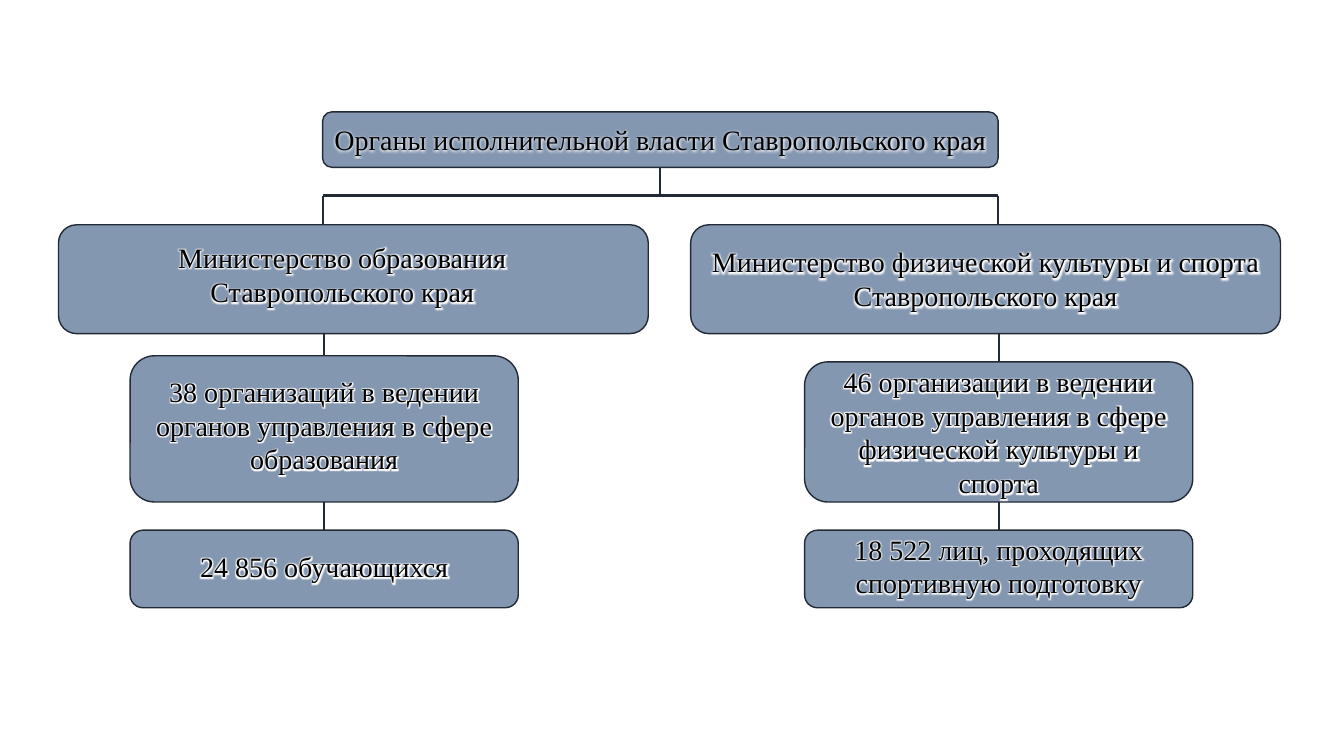
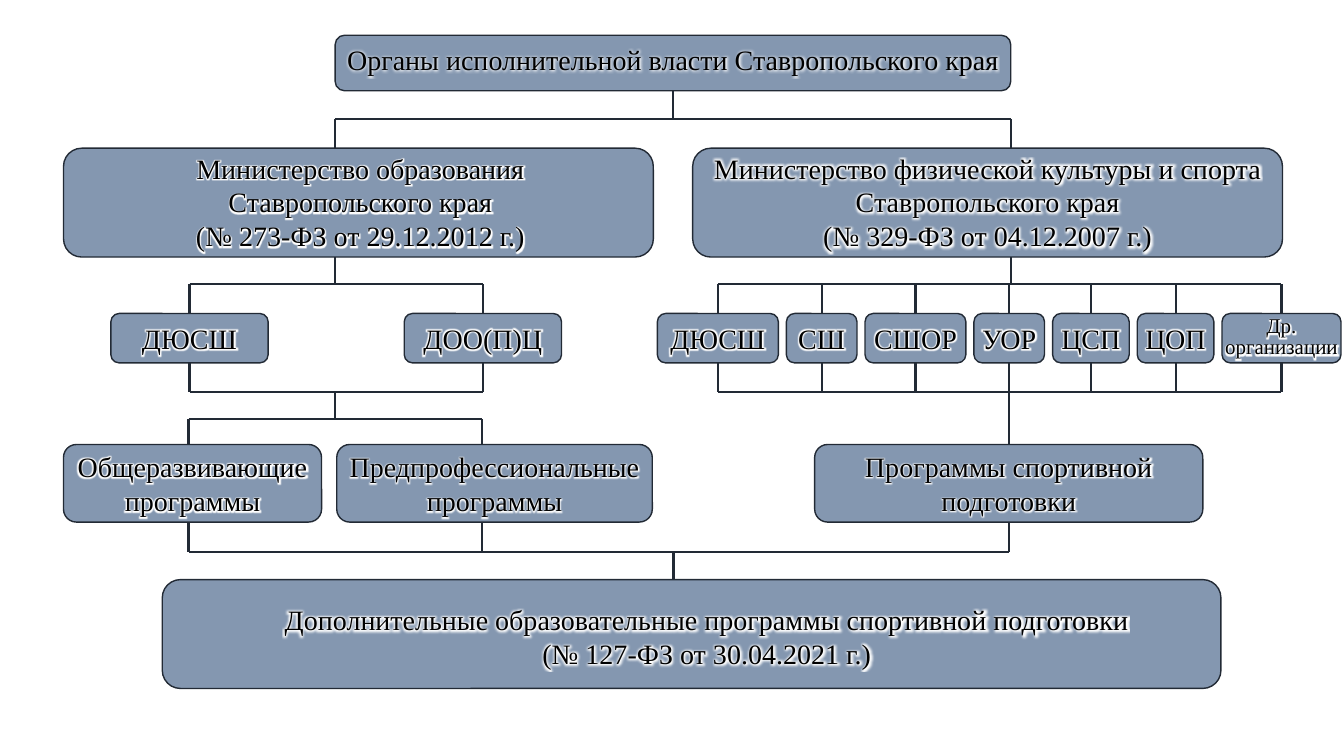
import dataclasses

import pptx
import pptx.dml.color
import pptx.enum.shapes
import pptx.enum.text
import pptx.oxml
import pptx.oxml.ns
import pptx.util
from pptx.util import Inches


@dataclasses.dataclass(frozen=True)
class Theme:
    font: str = "Times New Roman"
    fill: str = "8497B0"
    line: str = "222A35"
    text: str = "000000"
    glow: str = "FFFFFF"
    size: int = 20
    small: int = 15
    border: float = 1
    link: float = 1.5
    pad: float = 0.06


THEME = Theme()
TITLE = "Органы исполнительной власти Ставропольского края"
EDUCATION = "Министерство образования\nСтавропольского края"
SPORT = "Министерство физической культуры и спорта Ставропольского края"
A_NS = pptx.oxml.ns.nsdecls("a")


def rgb(value):
    return pptx.dml.color.RGBColor.from_string(value)


def add_glow(r):
    """Put a soft white halo behind the letters of a run."""
    effect = pptx.oxml.parse_xml(
        f'<a:effectLst {A_NS}><a:glow rad="63500"><a:srgbClr val="{THEME.glow}"/>'
        "</a:glow></a:effectLst>")
    r.font.fill._xPr.find(pptx.oxml.ns.qn("a:solidFill")).addnext(effect)


def box(s, x, y, w, h, text, shift=(0, 0), wrap=True, size=THEME.size):
    """Rounded box with centred text, which shift moves off the centre."""
    sp = s.shapes.add_shape(pptx.enum.shapes.MSO_SHAPE.ROUNDED_RECTANGLE,
                            Inches(x), Inches(y), Inches(w), Inches(h))
    sp.shadow.inherit = False
    sp.fill.solid()
    sp.fill.fore_color.rgb = rgb(THEME.fill)
    sp.line.color.rgb = rgb(THEME.line)
    sp.line.width = pptx.util.Pt(THEME.border)
    tf = sp.text_frame
    tf.word_wrap = wrap
    tf.vertical_anchor = pptx.enum.text.MSO_ANCHOR.MIDDLE
    dx, dy = shift
    tf.margin_left = Inches(THEME.pad + max(0, 2 * dx))
    tf.margin_right = Inches(THEME.pad + max(0, -2 * dx))
    tf.margin_top = Inches(max(0, 2 * dy))
    tf.margin_bottom = Inches(max(0, -2 * dy))
    tf.text = text
    for p in tf.paragraphs:
        p.alignment = pptx.enum.text.PP_ALIGN.CENTER
        if size == THEME.small:
            p.line_spacing = pptx.util.Pt(size)
        for r in p.runs:
            r.font.size = pptx.util.Pt(size)
            r.font.color.rgb = rgb(THEME.text)
            r.font.name = THEME.font
            add_glow(r)
    return sp


def line(s, x1, y1, x2, y2):
    c = s.shapes.add_connector(pptx.enum.shapes.MSO_CONNECTOR.STRAIGHT,
                               Inches(x1), Inches(y1), Inches(x2), Inches(y2))
    c.line.color.rgb = rgb(THEME.line)
    c.line.width = pptx.util.Pt(THEME.link)
    c._element.spPr.append(pptx.oxml.parse_xml(f"<a:effectLst {A_NS}/>"))
    return c


def middle(sp):
    return (sp.left + sp.width / 2) / Inches(1)


def top(sp):
    return sp.top / Inches(1)


def bottom(sp):
    return (sp.top + sp.height) / Inches(1)


def snap(x, sp):
    """Return x, or the middle of the box when x lies next to it."""
    return middle(sp) if abs(middle(sp) - x) < 0.03 else x


def stem(s, x, upper, lower):
    """Vertical line between two ends, each a box or a height."""
    ends = [upper, lower]
    boxes = [e for e in ends if not isinstance(e, (int, float))]
    for sp in boxes:
        x = snap(x, sp)
    y1 = bottom(upper) if upper in boxes else upper
    y2 = top(lower) if lower in boxes else lower
    c = line(s, x, y1, x, y2)
    if upper in boxes and x == middle(upper):
        c.begin_connect(upper, 2)
    if lower in boxes and x == middle(lower):
        c.end_connect(lower, 0)
    return x


def comb(s, y, teeth):
    """Horizontal bar at y with a stem to each (x, box) above or below it."""
    xs = [stem(s, x, sp, y) if bottom(sp) <= y else stem(s, x, y, sp)
          for x, sp in teeth]
    line(s, min(xs), y, max(xs), y)


def centred(boxes):
    return [(middle(sp), sp) for sp in boxes]


def authorities(s, x, y, w, education, sport, title_dx=0, title_dy=0, shift=(0, 0)):
    """Head box over two ministries; returns ministries and their stem positions."""
    title_w, ministry_w, ministry_h = 6.7, 5.85, 1.08
    left = x + (w - title_w) / 2 + title_dx
    right = left + title_w
    title = box(s, left, y, title_w, 0.55, TITLE, (0, title_dy))
    row = y + 1.12
    first = box(s, x, row, ministry_w, ministry_h, education, shift)
    second = box(s, x + w - ministry_w, row, ministry_w, ministry_h, sport, (0, -0.01))
    comb(s, y + 0.83, [(middle(title), title), (left, first), (right, second)])
    return first, second, left, right


def branch(s, x, y, h, ministry, bodies, people, shift=(0, 0)):
    """Two stacked boxes under a ministry, ending at a common row."""
    w = 3.85
    upper = box(s, x, y, w, h, bodies, shift)
    lower = box(s, x, y + h + 0.28, w, 0.77, people, (0, -0.03))
    stem(s, middle(upper), ministry, upper)
    stem(s, middle(upper), upper, lower)


def row_of_schools(s, x, y, gap, schools):
    """Row of small boxes, given as (text, width)."""
    boxes = []
    for text, w in schools:
        size = THEME.small if "\n" in text else THEME.size
        boxes.append(box(s, x, y, w, 0.49, text, wrap=False, size=size))
        x += w + gap
    return boxes


def management_slide(prs):
    s = prs.slides.add_slide(prs.slide_layouts[6])
    first, second, _, _ = authorities(s, 0.58, 1.11, 12.12, EDUCATION, SPORT,
                                      title_dx=-0.09, shift=(-0.11, -0.05))
    branch(s, 1.29, 3.53, 1.45, first,
           "38 организаций в ведении органов управления в сфере образования",
           "24 856 обучающихся", (0, -0.04))
    branch(s, 7.98, 3.59, 1.39, second,
           "46 организации в ведении органов управления в сфере физической культуры и спорта",
           "18 522 лиц, проходящих спортивную подготовку")


def programmes_slide(prs):
    s = prs.slides.add_slide(prs.slide_layouts[6])
    first, second, left, right = authorities(
        s, 0.63, 0.35, 12.09,
        EDUCATION + "\n(№ 273-ФЗ от 29.12.2012 г.)",
        SPORT + "\n(№ 329-ФЗ от 04.12.2007 г.)",
        title_dy=-0.04, shift=(0.02, -0.01))

    # Schools under each ministry
    school_y = 3.11
    edu_schools = row_of_schools(s, 1.1, school_y, 1.35,
                                 [("ДЮСШ", 1.56), ("ДОО(П)Ц", 1.56)])
    sport_schools = row_of_schools(
        s, 6.52, school_y, 0.08,
        [("ДЮСШ", 1.2), ("СШ", 0.7), ("СШОР", 1), ("УОР", 0.7),
         ("ЦСП", 0.76), ("ЦОП", 0.76), ("Др.\nорганизации", 1.18)])
    comb(s, 2.82, [(left, first)] + centred(edu_schools))
    comb(s, 2.82, [(right, second)] + centred(sport_schools))

    # Programmes
    prog_y, prog_h = 4.41, 0.77
    general = box(s, 0.63, prog_y, 2.56, prog_h, "Общеразвивающие программы")
    pre_pro = box(s, 3.34, prog_y, 3.13, prog_h, "Предпрофессиональные программы")
    training = box(s, 8.08, prog_y, 3.85, prog_h, "Программы спортивной подготовки")
    edu_programmes = [(1.87, general), (4.78, pre_pro)]
    comb(s, 3.89, centred(edu_schools))
    stem(s, left, 3.89, 4.16)
    comb(s, 4.16, edu_programmes)
    comb(s, 3.89, centred(sport_schools) + [(right, training)])

    # Resulting programmes
    result = box(s, 1.61, 5.75, 10.5, 1.08,
                 "Дополнительные образовательные программы спортивной подготовки\n"
                 "(№ 127-ФЗ от 30.04.2021 г.)", (0.15, 0.02))
    comb(s, 5.48, edu_programmes + [(right, training), (6.68, result)])


def main():
    prs = pptx.Presentation()
    prs.slide_width, prs.slide_height = Inches(13.33), Inches(7.5)
    management_slide(prs)
    programmes_slide(prs)
    prs.save("out.pptx")


if __name__ == "__main__":
    main()
